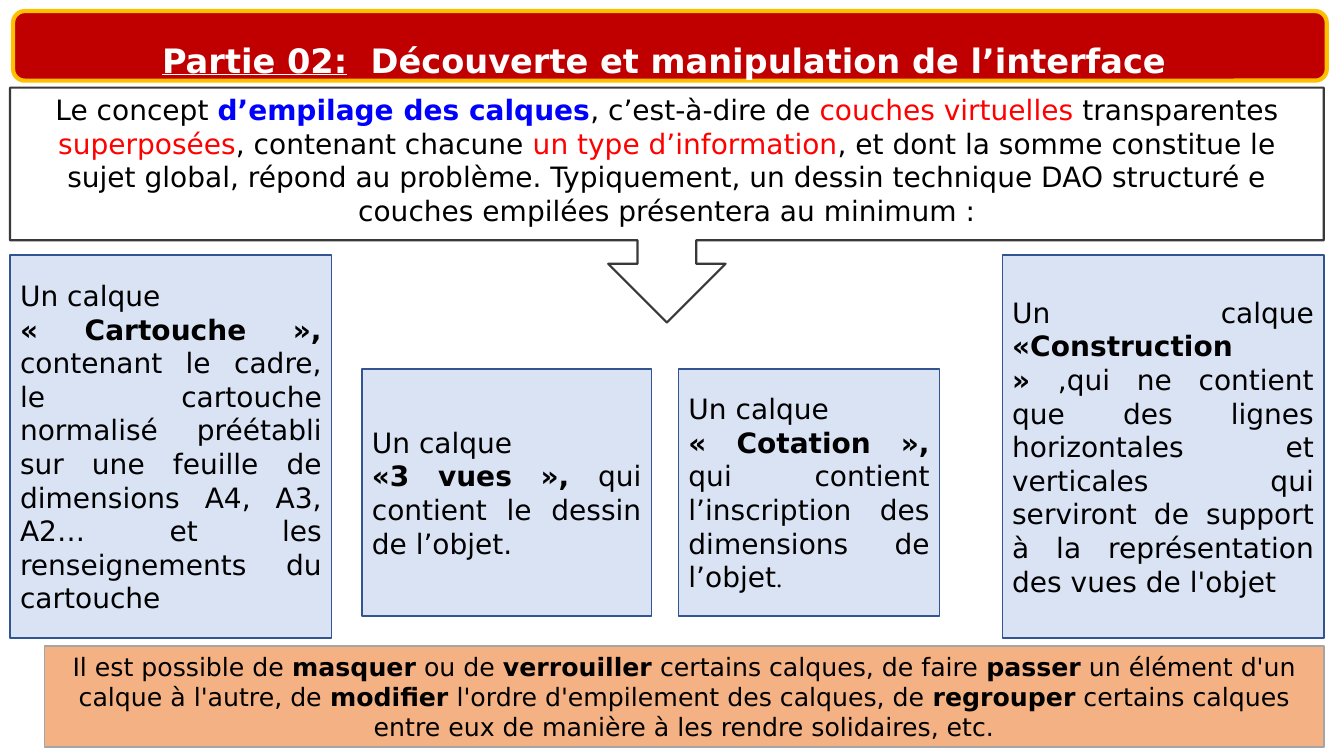
from pptx import Presentation
from pptx.dml.color import RGBColor
from pptx.enum.shapes import MSO_SHAPE as Preset
from pptx.enum.text import MSO_ANCHOR as Anchor, PP_ALIGN as Align
from pptx.util import Pt

EMU_PER_PX = 9144
PAGE_SIZE = (1333, 750)


def px(length):
    """Turn px into EMU."""
    return length * EMU_PER_PX


def color(value):
    """Turn a hex string into a colour."""
    return RGBColor.from_string(value)


class Page:
    """Holds the style and the current slide."""

    font = "DejaVu Sans"
    ink = "000000"
    panel_fill, panel_line = "DAE3F3", "325491"
    marks = {
        "bold": {"bold": True},
        "blue": {"bold": True, "ink": "0000FF"},
        "red": {"ink": "FF0000"},
        "underline": {"underline": True},
        "serif": {"font": "Times New Roman", "size": 18},
    }

    def __init__(self, deck):
        """Add a blank slide to the deck."""
        self.slide = deck.slides.add_slide(deck.slide_layouts[6])

    def shape(self, preset, place, fill, line, weight=1):
        """Draw a preset shape."""
        box = self.slide.shapes.add_shape(preset, *map(px, place))
        box.shadow.inherit = False
        if fill:
            box.fill.solid()
            box.fill.fore_color.rgb = color(fill)
        else:
            box.fill.background()
        box.line.color.rgb = color(line)
        box.line.width = Pt(weight)
        return box

    def text_box(self, place):
        """Add an empty text box."""
        return self.slide.shapes.add_textbox(*map(px, place))

    def text(self, box, paras, size=20, align=Align.CENTER, anchor=Anchor.MIDDLE,
             ink=ink, bold=False, spacing=None):
        """Fill a box with paragraphs of plain strings and (text, mark) pairs."""
        frame = box.text_frame
        frame.word_wrap = True
        frame.vertical_anchor = anchor
        for index, spans in enumerate(paras):
            para = frame.add_paragraph() if index else frame.paragraphs[0]
            para.alignment = align
            para.line_spacing = spacing
            para.font.name = self.font
            para.font.size = Pt(size)
            para.font.bold = bold
            para.font.color.rgb = color(ink)
            for part in spans:
                words, mark = (part, None) if isinstance(part, str) else part
                self.span(para, words, **self.marks.get(mark, {}))

    def span(self, para, words, bold=None, underline=None, ink=None, font=None,
             size=None):
        """Add a run with its own style."""
        span = para.add_run()
        span.text = words
        span.font.bold = bold
        span.font.underline = underline
        span.font.name = font
        if size:
            span.font.size = Pt(size)
        if ink:
            span.font.color.rgb = color(ink)

    def panel(self, place, paras):
        """Draw a blue panel of justified text."""
        box = self.shape(Preset.RECTANGLE, place, self.panel_fill, self.panel_line)
        self.text(box, paras, align=Align.JUSTIFY)


INTRO = [
    "Le concept ", ("d’empilage des calques", "blue"), ", c’est-à-dire de ",
    ("couches virtuelles ", "red"), "transparentes ", ("superposées", "red"),
    ", contenant chacune ", ("un type d’information", "red"),
    ", et dont la somme constitue le sujet global, répond au problème. Typiquement, "
    "un dessin technique DAO structuré e couches empilées présentera au minimum :",
]
PANELS = [
    ((10, 253, 319, 380), [
        ["Un calque"],
        [("« Cartouche », ", "bold"),
         "contenant le cadre, le cartouche normalisé préétabli sur une feuille de "
         "dimensions A4, A3, A2… et les renseignements du cartouche"]]),
    ((359, 366, 287, 245), [
        ["Un calque"],
        [("«3 vues », ", "bold"), "qui contient le dessin de l’objet."]]),
    ((673, 366, 259, 245), [
        ["Un calque"],
        [("« Cotation », ", "bold"),
         "qui contient l’inscription des dimensions de l’objet", (".", "serif")]]),
    ((994, 253, 319, 380), [
        ["Un calque ", ("«Construction » ", "bold"),
         ",qui ne contient que des lignes horizontales et verticales qui serviront "
         "de support à la représentation des vues de l'objet"]]),
]
SUMMARY = [
    "Il est possible de ", ("masquer", "bold"), " ou de ", ("verrouiller", "bold"),
    " certains calques, de faire ", ("passer", "bold"),
    " un élément d'un calque à l'autre, de ", ("modifier", "bold"),
    " l'ordre d'empilement des calques, de ", ("regrouper", "bold"),
    " certains calques entre eux de manière à les rendre solidaires, etc.",
]
TITLE = [("Partie 02:", "underline"), "  Découverte et manipulation de l’interface "]


def main():
    """Build the slide and save it."""
    deck = Presentation()
    deck.slide_width, deck.slide_height = map(px, PAGE_SIZE)
    page = Page(deck)
    page.shape(Preset.DOWN_ARROW_CALLOUT, (10, 87, 1303, 233), None, "3B3838", 1.5)
    page.text(page.text_box((10, 87, 1303, 145)), [INTRO], anchor=Anchor.TOP)
    for place, paras in PANELS:
        page.panel(place, paras)
    summary = page.shape(Preset.RECTANGLE, (44, 641, 1269, 100), "F4B183", "A5A5A5")
    page.text(summary, [SUMMARY], size=18)
    title = page.shape(Preset.FLOWCHART_ALTERNATE_PROCESS, (13, 11, 1303, 69),
                       "C00000", "FFC000", 3)
    page.text(title, [TITLE], size=24, anchor=Anchor.TOP, ink="FFFFFF", bold=True,
              spacing=1.5)
    deck.save("out.pptx")


if __name__ == "__main__":
    main()
